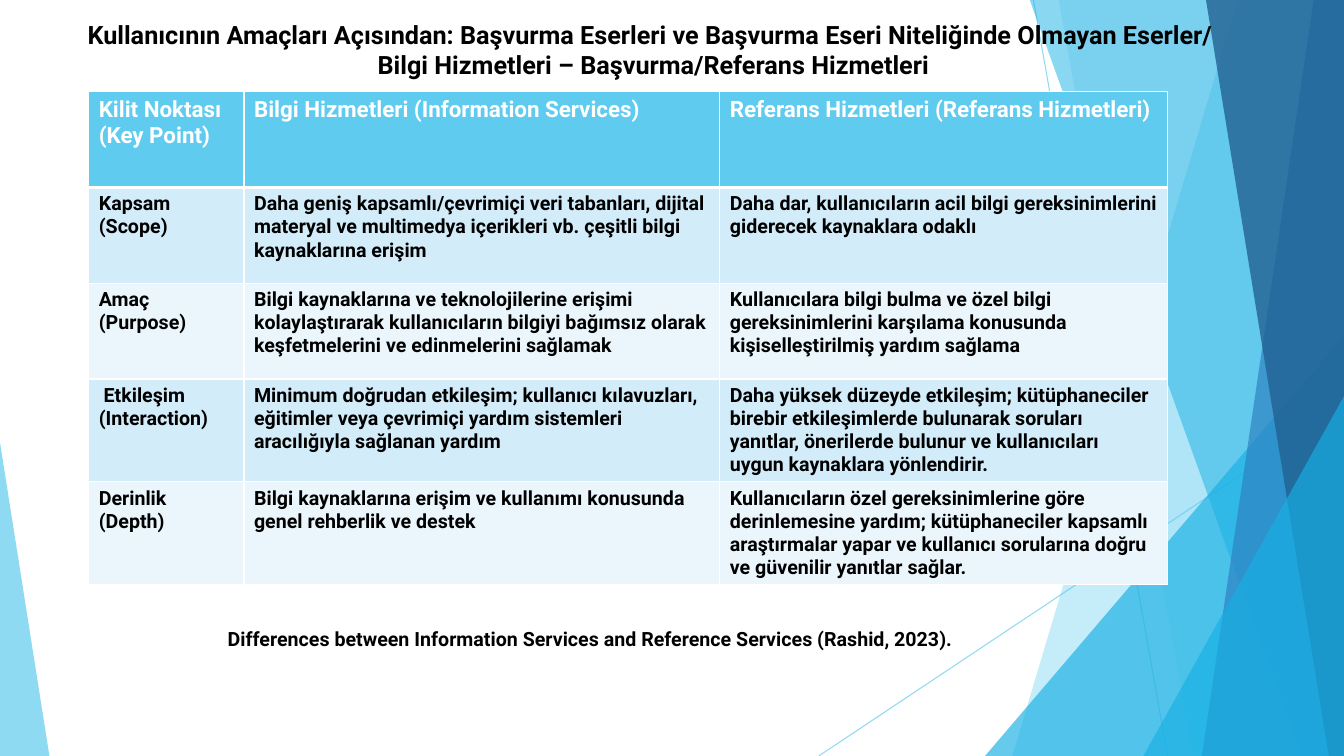
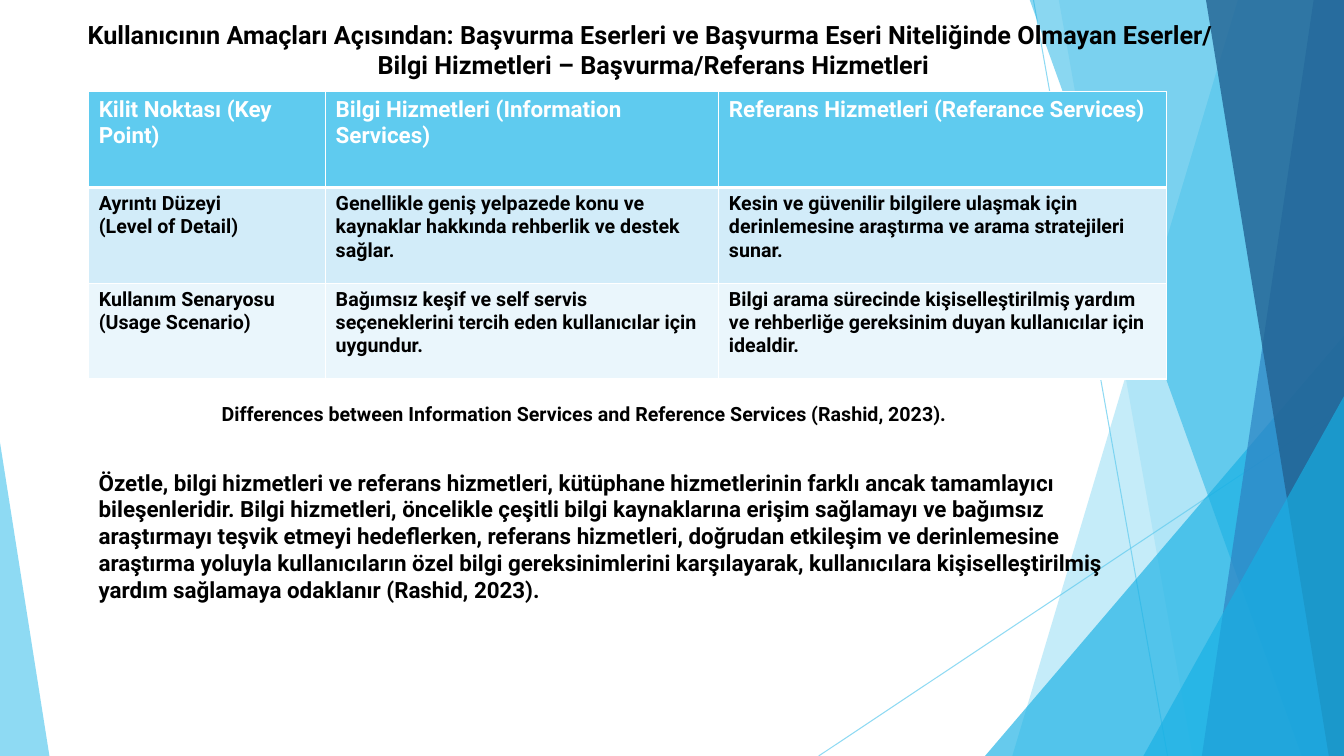
"""Build two slides comparing information services with reference services."""
from dataclasses import dataclass

from lxml import etree
from pptx import Presentation
from pptx.dml.color import RGBColor
from pptx.enum.shapes import MSO_CONNECTOR, MSO_SHAPE
from pptx.enum.text import MSO_ANCHOR, MSO_AUTO_SIZE, PP_ALIGN
from pptx.oxml.ns import qn
from pptx.util import Pt

STRAIGHT = MSO_CONNECTOR.STRAIGHT
TRIANGLE = MSO_SHAPE.ISOSCELES_TRIANGLE
MIDDLE = MSO_ANCHOR.MIDDLE
CENTER = PP_ALIGN.CENTER
NO_FIT, GROW = MSO_AUTO_SIZE.NONE, MSO_AUTO_SIZE.SHAPE_TO_FIT_TEXT

PX = 9144
WIDTH, HEIGHT = 1333, 750
TITLE_ONLY = 5


@dataclass(frozen=True)
class Theme:
    """Colours, font and type sizes of the deck."""
    font: str = "Roboto"
    ink: str = "000000"
    white: str = "FFFFFF"
    sky: str = "5FCBEF"
    cyan: str = "17B0E4"
    blue: str = "2E83C3"
    navy: str = "226292"
    stripes: tuple = ("D2ECF9", "EAF6FC")
    title: int = 18
    large: int = 16
    small: int = 14
    hairline: float = 0.75
    rule: int = 1
    header_rule: int = 3


THEME = Theme()

TITLE_BOX = (35, 12, 1226, 74)
TITLE_LINES = (
    "Kullanıcının Amaçları Açısından: Başvurma Eserleri ve Başvurma Eseri Niteliğinde Olmayan Eserler/ ",
    "Bilgi Hizmetleri – Başvurma/Referans Hizmetleri",
)
CAPTION = "Differences between Information Services and Reference Services (Rashid, 2023)."
SUMMARY = (
    "Özetle, bilgi hizmetleri ve referans hizmetleri, kütüphane hizmetlerinin farklı ancak "
    "tamamlayıcı bileşenleridir. Bilgi hizmetleri, öncelikle çeşitli bilgi kaynaklarına erişim "
    "sağlamayı ve bağımsız araştırmayı teşvik etmeyi hedeflerken, referans hizmetleri, doğrudan "
    "etkileşim ve derinlemesine araştırma yoluyla kullanıcıların özel bilgi gereksinimlerini "
    "karşılayarak, kullanıcılara kişiselleştirilmiş yardım sağlamaya odaklanır (Rashid, 2023)."
)

TABLE_LEFT, TABLE_TOP = 88, 91
SLIDES = [
    {
        "columns": (154, 472, 444),
        "heights": (95, 95, 95, 102, 102),
        "rows": [
            ("Kilit Noktası (Key Point)",
             "Bilgi Hizmetleri (Information Services)",
             "Referans Hizmetleri (Referans Hizmetleri)"),
            ("Kapsam (Scope)",
             "Daha geniş kapsamlı/çevrimiçi veri tabanları, dijital materyal ve multimedya "
             "içerikleri vb. çeşitli bilgi kaynaklarına erişim",
             "Daha dar, kullanıcıların acil bilgi gereksinimlerini giderecek kaynaklara odaklı"),
            ("Amaç (Purpose)",
             "Bilgi kaynaklarına ve teknolojilerine erişimi kolaylaştırarak kullanıcıların "
             "bilgiyi bağımsız olarak keşfetmelerini ve edinmelerini sağlamak",
             "Kullanıcılara bilgi bulma ve özel bilgi gereksinimlerini karşılama konusunda "
             "kişiselleştirilmiş yardım sağlama"),
            (" Etkileşim (Interaction)",
             "Minimum doğrudan etkileşim; kullanıcı kılavuzları, eğitimler veya çevrimiçi "
             "yardım sistemleri aracılığıyla sağlanan yardım",
             "Daha yüksek düzeyde etkileşim; kütüphaneciler birebir etkileşimlerde bulunarak "
             "soruları yanıtlar, önerilerde bulunur ve kullanıcıları uygun kaynaklara yönlendirir."),
            ("Derinlik (Depth)",
             "Bilgi kaynaklarına erişim ve kullanımı konusunda genel rehberlik ve destek",
             "Kullanıcıların özel gereksinimlerine göre derinlemesine yardım; kütüphaneciler "
             "kapsamlı araştırmalar yapar ve kullanıcı sorularına doğru ve güvenilir yanıtlar sağlar."),
        ],
        "notes": [(CAPTION, (216, 617, 813, 34), THEME.small)],
    },
    {
        "columns": (235, 390, 444),
        "heights": (95, 95, 95),
        "rows": [
            ("Kilit Noktası (Key Point)",
             "Bilgi Hizmetleri (Information Services)",
             "Referans Hizmetleri (Referance Services)"),
            (("Ayrıntı Düzeyi", "(Level of Detail)"),
             "Genellikle geniş yelpazede konu ve kaynaklar hakkında rehberlik ve destek sağlar.",
             "Kesin ve güvenilir bilgilere ulaşmak için derinlemesine araştırma ve arama "
             "stratejileri sunar."),
            ("Kullanım Senaryosu (Usage Scenario)",
             "Bağımsız keşif ve self servis seçeneklerini tercih eden kullanıcılar için uygundur.",
             "Bilgi arama sürecinde kişiselleştirilmiş yardım ve rehberliğe gereksinim duyan "
             "kullanıcılar için idealdir."),
        ],
        "notes": [
            (SUMMARY, (88, 460, 1069, 145), THEME.large),
            (CAPTION, (210, 394, 805, 34), THEME.small),
        ],
    },
]

RAYS = [(1025, 0, 1158, 750), (1333, 403, 812, 750)]
RAY_OPACITY = 70
# Bands hold the x of their top and bottom left corners; triangles hold a box and the apex position.
FACETS = [
    ("band", (1228, 1004), THEME.sky, 36),
    ("band", (1050, 1183), THEME.sky, 20),
    ("triangle", (977, 333, 356, 417, 1), THEME.cyan, 66),
    ("band", (1021, 1291), THEME.cyan, 50),
    ("band", (1303, 1192), THEME.blue, 70),
    ("band", (1196, 1318), THEME.navy, 80),
    ("triangle", (1134, 393, 199, 357, 1), THEME.cyan, 66),
    ("triangle", (0, 439, 49, 311, 0), THEME.sky, 70),
]


def emu(lengths):
    return [length * PX for length in lengths]


def rgb(color):
    return RGBColor.from_string(color)


def set_opacity(shape, percent):
    color = shape.element.find(".//" + qn("a:srgbClr"))
    etree.SubElement(color, qn("a:alpha"), val=str(percent * 1000))


def style_paragraph(para, size, color=THEME.ink):
    font = para.font
    font.name, font.size, font.bold = THEME.font, Pt(size), True
    font.color.rgb = rgb(color)


def add_ray(shapes, ends):
    ray = shapes.add_connector(STRAIGHT, *emu(ends))
    ray.line.color.rgb = rgb(THEME.sky)
    ray.line.width = Pt(THEME.hairline)
    set_opacity(ray, RAY_OPACITY)
    etree.SubElement(ray.element.spPr, qn("a:effectLst"))
    return ray


def add_facet(shapes, kind, geometry, color, opacity):
    if kind == "band":
        top_x, bottom_x = geometry
        outline = shapes.build_freeform(top_x, -1, scale=PX)
        outline.add_line_segments([(WIDTH, -1), (WIDTH, HEIGHT), (bottom_x, HEIGHT)])
        facet = outline.convert_to_shape()
    else:
        *box, apex = geometry
        facet = shapes.add_shape(TRIANGLE, *emu(box))
        facet.adjustments[0] = apex
    facet.shadow.inherit = False
    facet.fill.solid()
    facet.fill.fore_color.rgb = rgb(color)
    facet.line.fill.background()
    set_opacity(facet, opacity)
    return facet


def decorate_layout(layout, slide):
    """Draw the facets with the slide's shape tools and move them to the layout."""
    for holder in list(layout.placeholders):
        if holder.placeholder_format.idx:
            layout.shapes.element.remove(holder.element)
    title = layout.placeholders[0]
    title.left, title.top, title.width, title.height = emu(TITLE_BOX)
    parts = [add_ray(slide.shapes, ends) for ends in RAYS]
    parts += [add_facet(slide.shapes, *facet) for facet in FACETS]
    for part in parts:
        layout.shapes.element.append(part.element)


def write_title(slide):
    frame = slide.shapes.title.text_frame
    frame.auto_size, frame.vertical_anchor = NO_FIT, MIDDLE
    para = frame.paragraphs[0]
    para.alignment = CENTER
    style_paragraph(para, THEME.title)
    first, second = TITLE_LINES
    para.add_run().text = first
    para.add_line_break()
    para.add_run().text = second


def set_borders(cell, top, bottom):
    widths = {"a:lnL": THEME.rule, "a:lnR": THEME.rule, "a:lnT": top, "a:lnB": bottom}
    properties = cell.fill and cell._tc.get_or_add_tcPr()
    for position, (tag, width) in enumerate(widths.items()):
        line = etree.Element(qn(tag), w=str(Pt(width)))
        fill = etree.SubElement(line, qn("a:solidFill"))
        etree.SubElement(fill, qn("a:srgbClr"), val=THEME.white)
        properties.insert(position, line)


def fill_cell(cell, content, row):
    lines = (content,) if isinstance(content, str) else content
    header = row == 0
    size, color = (THEME.large, THEME.white) if header else (THEME.small, THEME.ink)
    frame = cell.text_frame
    for position, line in enumerate(lines):
        para = frame.add_paragraph() if position else frame.paragraphs[0]
        para.text = line
        style_paragraph(para, size, color)
    cell.fill.solid()
    cell.fill.fore_color.rgb = rgb(THEME.sky if header else THEME.stripes[(row - 1) % 2])
    set_borders(cell,
                THEME.header_rule if row == 1 else THEME.rule,
                THEME.header_rule if header else THEME.rule)


def add_comparison(slide, columns, heights, rows):
    box = emu((TABLE_LEFT, TABLE_TOP, sum(columns), sum(heights)))
    table = slide.shapes.add_table(len(rows), len(columns), *box).table
    for column, width in zip(table.columns, columns):
        column.width = width * PX
    for index, (height, contents) in enumerate(zip(heights, rows)):
        table.rows[index].height = height * PX
        for position, content in enumerate(contents):
            fill_cell(table.cell(index, position), content, index)


def add_note(slide, text, box, size):
    frame = slide.shapes.add_textbox(*emu(box)).text_frame
    frame.word_wrap, frame.auto_size = True, GROW
    para = frame.paragraphs[0]
    para.text = text
    style_paragraph(para, size)


def main():
    deck = Presentation()
    deck.slide_width, deck.slide_height = emu((WIDTH, HEIGHT))
    layout = deck.slide_layouts[TITLE_ONLY]
    pages = [deck.slides.add_slide(layout) for _ in SLIDES]
    decorate_layout(layout, pages[0])
    for page, content in zip(pages, SLIDES):
        write_title(page)
        add_comparison(page, content["columns"], content["heights"], content["rows"])
        for note in content["notes"]:
            add_note(page, *note)
    deck.save("out.pptx")


if __name__ == "__main__":
    main()
